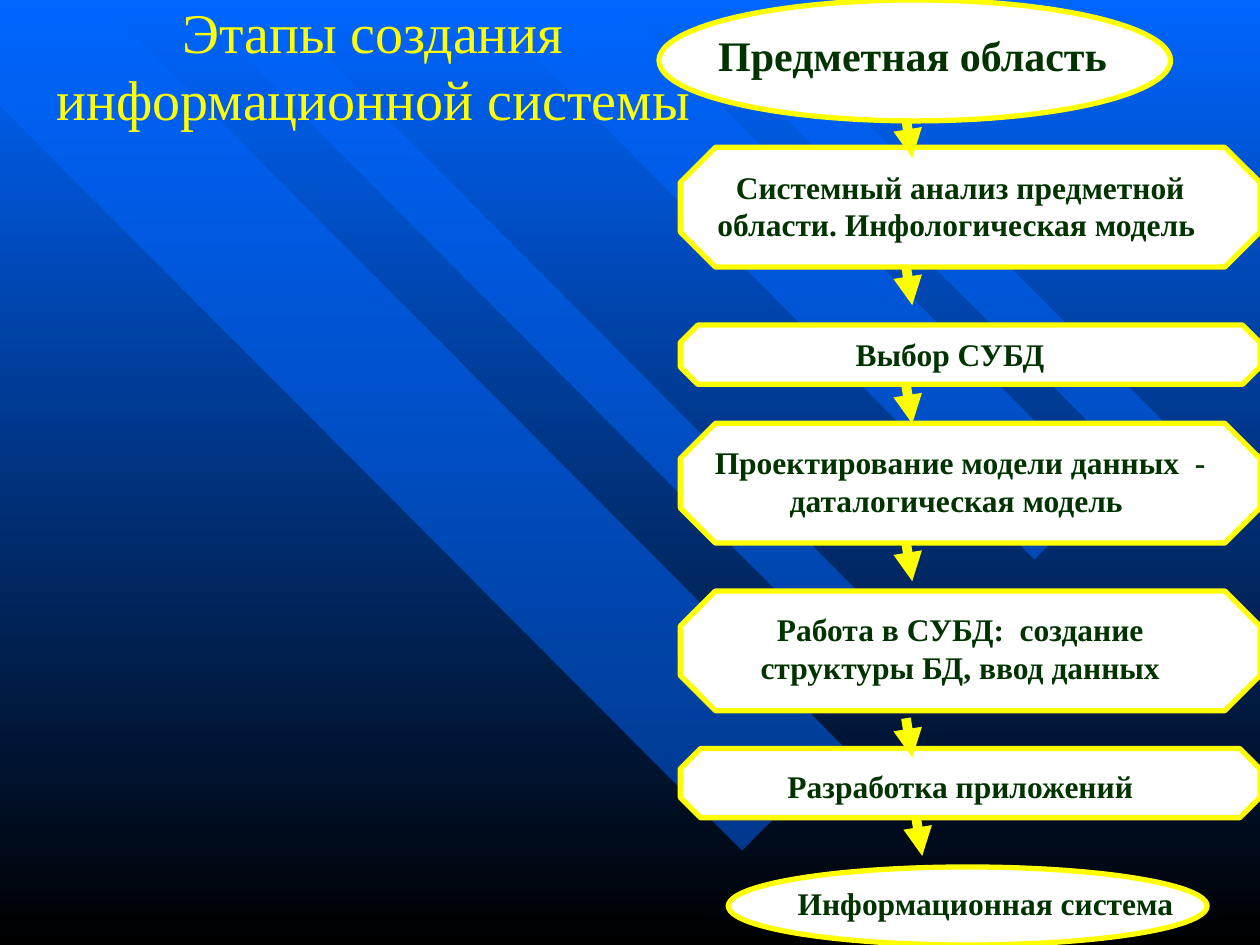
import pptx
import pptx.util
import pptx.dml.color
import pptx.enum.shapes
import pptx.enum.text
import pptx.oxml.ns
from lxml import etree

Pt = pptx.util.Pt
Shape = pptx.enum.shapes.MSO_SHAPE
Align = pptx.enum.text.PP_ALIGN
Anchor = pptx.enum.text.MSO_ANCHOR
qn = pptx.oxml.ns.qn

COLORS = {"blue": "0066FF", "black": "000000", "yellow": "FFFF00",
          "white": "FFFFFF", "green": "003300"}


def rgb(name):
    return pptx.dml.color.RGBColor.from_string(COLORS[name])


class StagePage:
    """Draws the elements of a flow of stages on one slide."""

    font = "Times New Roman"
    outline = 3
    arrow_width = 5.5
    corner = 0.293

    def __init__(self, deck):
        self.page = deck.slides.add_slide(deck.slide_layouts[6])
        self.shapes = self.page.shapes

    def background(self, top, bottom):
        fill = self.page.background.fill
        fill.gradient()
        fill.gradient_angle = 270
        for stop, name in zip(fill.gradient_stops, (top, bottom)):
            stop.color.rgb = rgb(name)

    def stripe(self, points):
        start, *rest = [(Pt(x), Pt(y)) for x, y in points]
        builder = self.shapes.build_freeform(*start)
        builder.add_line_segments(rest, close=True)
        band = builder.convert_to_shape()
        band.shadow.inherit = False
        band.fill.solid()
        band.fill.fore_color.rgb = rgb("blue")
        color = band.fill._xPr.find(qn("a:solidFill"))[0]
        etree.SubElement(color, qn("a:alpha"), val="50000")
        band.line.fill.background()

    def node(self, kind, left, top, width, height):
        node = self.shapes.add_shape(kind, Pt(left), Pt(top), Pt(width), Pt(height))
        if kind == Shape.OCTAGON:
            node.adjustments[0] = self.corner
        node.shadow.inherit = False
        node.fill.solid()
        node.fill.fore_color.rgb = rgb("white")
        node.line.color.rgb = rgb("yellow")
        node.line.width = Pt(self.outline)

    def text(self, words, left, top, width, height, size=18, color="green",
             bold=True, align=Align.CENTER, anchor=Anchor.TOP, inset=(0, 0)):
        box = self.shapes.add_textbox(Pt(left), Pt(top), Pt(width), Pt(height))
        frame = box.text_frame
        frame.word_wrap = True
        frame.vertical_anchor = anchor
        frame.margin_left = frame.margin_right = Pt(inset[0])
        frame.margin_top = frame.margin_bottom = Pt(inset[1])
        para = frame.paragraphs[0]
        para.text = words
        para.alignment = align
        para.font.name = self.font
        para.font.size = Pt(size)
        para.font.bold = bold
        para.font.color.rgb = rgb(color)

    def arrow(self, left, top, across=3.6, down=22.5):
        arrow = self.shapes.add_connector(
            pptx.enum.shapes.MSO_CONNECTOR.STRAIGHT,
            Pt(left), Pt(top), Pt(left + across), Pt(top + down))
        arrow.line.color.rgb = rgb("yellow")
        arrow.line.width = Pt(self.arrow_width)
        etree.SubElement(arrow.line._get_or_add_ln(), qn("a:tailEnd"), type="triangle")
        etree.SubElement(arrow._element.spPr, qn("a:effectLst"))


STRIPES = [
    [(482.4, 427), (56.9, 0), (0, 0), (0, 60.5), (424.1, 486)],
    [(154.1, 0), (531.4, 379.4), (508.3, 402.5), (107.3, 0)],
    [(352.1, 0), (630.7, 280.1), (591.1, 319.7), (273.6, 0)],
    [(381.6, 0), (645.8, 265), (667.4, 243.4), (425.5, 0)],
]

STAGES = [
    ("Системный анализ предметной области. Инфологическая модель ",
     84.2, 68.4, 405.4, 95.8, 51.8),
    ("Выбор СУБД", 185.8, 33.8, 399.6, 191.5, 22.3),
    ("Проектирование модели данных  - даталогическая модель ",
     241.9, 68.4, 405.4, 253.4, 51.8),
    ("Работа в СУБД:  создание структуры БД, ввод данных",
     337.7, 68.4, 405.4, 348.5, 51.8),
    ("Разработка приложений", 427.7, 39.6, 405.4, 438.5, 22.3),
]

ARROWS = [(517.7, 67.7), (517.7, 151.9), (517.7, 219.6), (517.7, 309.6),
          (517.7, 410.4), (523.4, 466.6)]


def main():
    deck = pptx.Presentation()
    deck.slide_width, deck.slide_height = Pt(720), Pt(540)
    page = StagePage(deck)
    page.background("blue", "black")
    for points in STRIPES:
        page.stripe(points)
    page.text("Этапы создания\vинформационной системы", 22.3, 18, 382.3, 38.2,
              size=32, color="yellow", bold=False, anchor=Anchor.MIDDLE,
              inset=(7.2, 3.6))
    page.node(Shape.OVAL, 376.6, 0, 292.3, 69.1)
    page.text("Предметная область", 410.4, 16.6, 233.3, 34.6, size=24, align=Align.LEFT)
    for words, top, height, text_left, text_top, text_height in STAGES:
        page.node(Shape.OCTAGON, 388.8, top, 331.2, height)
        page.text(words, text_left, text_top, 286.6, text_height)
    page.node(Shape.OVAL, 416.2, 495.4, 273.6, 44.6)
    page.text("Информационная система", 455.8, 505.4, 233.3, 34.6, align=Align.LEFT)
    for left, top in ARROWS:
        page.arrow(left, top)
    deck.save("out.pptx")


if __name__ == "__main__":
    main()
